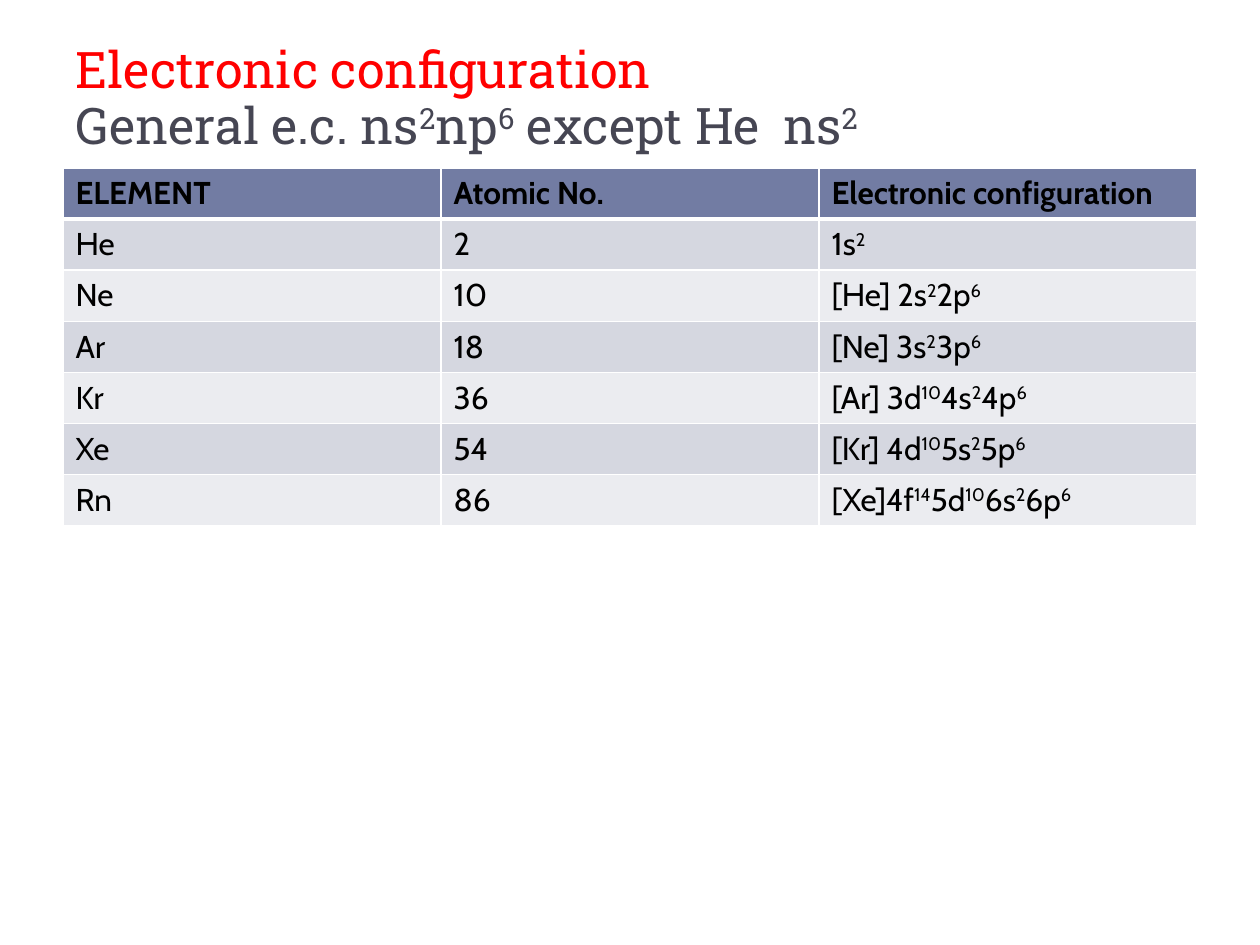
from lxml import etree
from pptx import Presentation
from pptx import util as u
from pptx.dml.color import RGBColor
from pptx.enum import text
from pptx.oxml import ns

PX = u.Inches(1) / 126
TITLE_FONT = {"name": "Roboto Slab", "size": u.Pt(28.8), "bold": False}
CELL_FONT = {"name": "Cabin", "size": u.Pt(18), "bold": False}
HEADER_FONT = {**CELL_FONT, "bold": True}
HEADER_FILL = "727CA3"
BAND_FILLS = ("D5D7E0", "EBECF0")
ROWS = [
    ("ELEMENT", "Atomic No.", "Electronic configuration"),
    ("He", "2", "1s^2^"),
    ("Ne", "10", "[He] 2s^2^2p^6^"),
    ("Ar", "18", "[Ne] 3s^2^3p^6^"),
    ("Kr", "36", "[Ar] 3d^10^4s^2^4p^6^"),
    ("Xe", "54", "[Kr] 4d^10^5s^2^5p^6^"),
    ("Rn", "86", "[Xe]4f^14^5d^10^6s^2^6p^6^"),
]


def px(n):
    return u.Emu(round(n * PX))


def color(hex_value):
    return RGBColor.from_string(hex_value)


def write(p, content, font, hex_value, spacing=None):
    """Add runs to a paragraph; parts between carets are superscript."""
    for i, part in enumerate(content.split("^")):
        if not part:
            continue
        r = p.add_run()
        r.text = part
        for name, value in font.items():
            setattr(r.font, name, value)
        r.font.color.rgb = color(hex_value)
        props = r._r.get_or_add_rPr()
        if i % 2:
            props.set("baseline", "30000")
        if spacing:
            props.set("spc", str(spacing))


def set_borders(cell, bottom):
    """Draw white cell edges, 1 pt wide except for the bottom one."""
    props = cell._tc.get_or_add_tcPr()
    widths = {"a:lnL": 1, "a:lnR": 1, "a:lnT": 1, "a:lnB": bottom}
    for i, (tag, width) in enumerate(widths.items()):
        line = etree.Element(ns.qn(tag), w=str(u.Pt(width)))
        fill = etree.SubElement(line, ns.qn("a:solidFill"))
        etree.SubElement(fill, ns.qn("a:srgbClr"), val="FFFFFF")
        props.insert(i, line)


def add_title(s):
    title = s.shapes.title
    title.left, title.top, title.width, title.height = map(px, (63, 21, 1134, 136))
    tf = title.text_frame
    settings = {"vertical_anchor": text.MSO_ANCHOR.BOTTOM, "word_wrap": True,
                "auto_size": text.MSO_AUTO_SIZE.NONE, "margin_bottom": px(1)}
    for name, value in settings.items():
        setattr(tf, name, value)
    p = tf.paragraphs[0]
    p.alignment = text.PP_ALIGN.LEFT
    p.line_spacing = 0.93
    write(p, "Electronic configuration", TITLE_FONT, "FF0000")
    p.add_line_break()
    write(p, "General e.c. ns^2^np^6^ except He", TITLE_FONT, "464653")
    write(p, " ", TITLE_FONT, "464653", spacing=600)
    write(p, "ns^2^", TITLE_FONT, "464653")


def add_configuration_table(s):
    row_height = 51
    frame = s.shapes.add_table(len(ROWS), len(ROWS[0]), px(63), px(168),
                               px(1134), px(row_height * len(ROWS)))
    for i, values in enumerate(ROWS):
        header = i == 0
        for j, value in enumerate(values):
            cell = frame.table.cell(i, j)
            cell.fill.solid()
            cell.fill.fore_color.rgb = color(
                HEADER_FILL if header else BAND_FILLS[(i - 1) % 2])
            set_borders(cell, bottom=3 if header else 1)
            write(cell.text_frame.paragraphs[0], value,
                  HEADER_FONT if header else CELL_FONT, "000000")


def main():
    prs = Presentation()
    prs.slide_width, prs.slide_height = px(1260), px(945)
    s = prs.slides.add_slide(prs.slide_layouts[5])
    add_title(s)
    add_configuration_table(s)
    prs.save("out.pptx")


if __name__ == "__main__":
    main()
